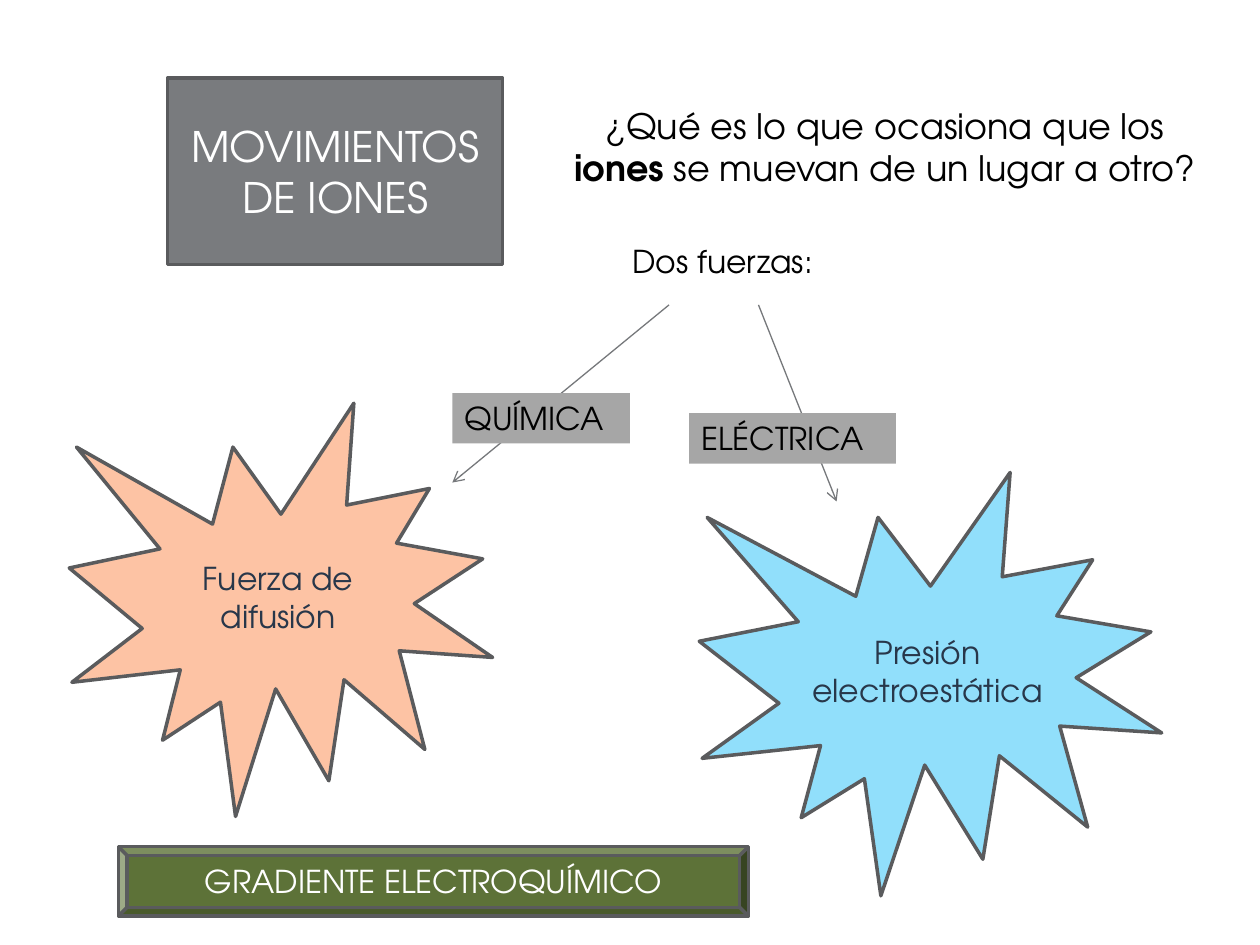
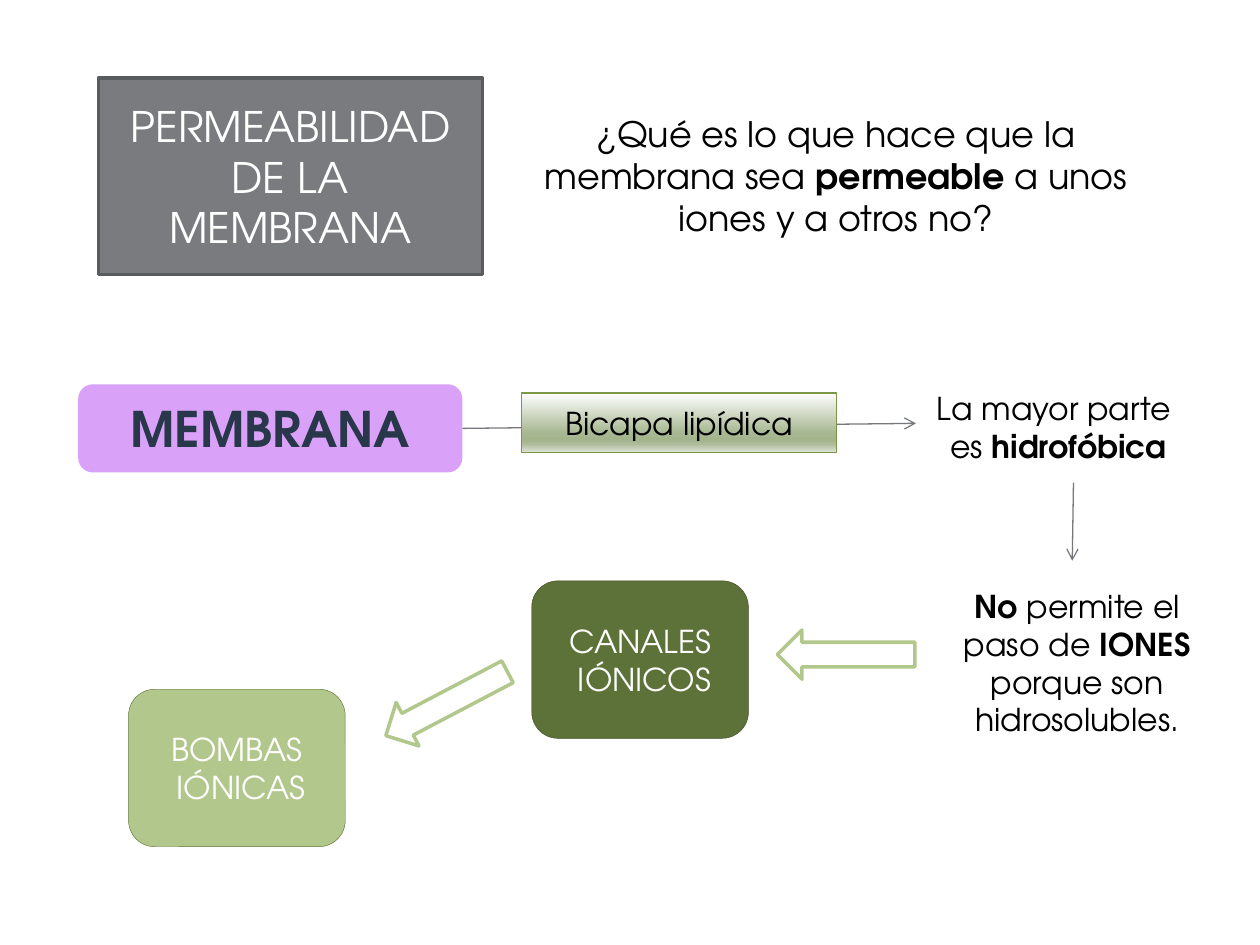
"""Builds two slides on ion movement and membrane permeability."""
from lxml.etree import SubElement as Sub
from pptx import Presentation
from pptx.dml.color import RGBColor
from pptx.enum.shapes import MSO_CONNECTOR as Wire, MSO_SHAPE as Kind
from pptx.enum.text import MSO_ANCHOR as Anchor, MSO_AUTO_SIZE as Auto, PP_ALIGN as Align
from pptx.oxml.ns import qn
from pptx.util import Inches, Pt

tint = RGBColor.from_string
FONT = "TeX Gyre Adventor"
BLACK, WHITE, NAVY = "000000", "FFFFFF", "28374A"
GRAY, EDGE, THIN, TAG = "797B7E", "5A5B5D", "76787B", "A6A6A6"
MOSS, LEAF = "5D7238", "B2C78C"

deck = Presentation()
deck.slide_width, deck.slide_height = Inches(10), Inches(7.5)
COL, ROW = deck.slide_width / 100, deck.slide_height / 75


def style(shape, at, fill=None, line=None, width=2):
    """Places a shape on the grid and sets its fill and line."""
    left, top, wide, high = at
    shape.left, shape.width = int(left * COL), int(wide * COL)
    shape.top, shape.height = int(top * ROW), int(high * ROW)
    shape.shadow.inherit = False
    if fill:
        shape.fill.solid()
        shape.fill.fore_color.rgb = tint(fill)
    else:
        shape.fill.background()
    if line:
        shape.line.color.rgb = tint(line)
        shape.line.width = Pt(width)
    else:
        shape.line.fill.background()


def write(shape, text, size=18, color=BLACK, align=Align.CENTER, anchor=Anchor.MIDDLE):
    """Writes lines of text, where stars enclose bold runs."""
    frame = shape.text_frame
    frame.word_wrap, frame.auto_size = True, Auto.NONE
    frame.vertical_anchor = anchor
    for row, words in enumerate(text.split("\n")):
        para = frame.add_paragraph() if row else frame.paragraphs[0]
        para.alignment = align
        for part, piece in enumerate(words.split("*")):
            if piece:
                run = para.add_run()
                run.text = piece
                font = run.font
                font.name, font.size, font.bold = FONT, Pt(size), part % 2 == 1
                font.color.rgb = tint(color)


pages = [
    {
        "title": ("MOVIMIENTOS DE IONES", (13.3, 6.2, 26.6, 14.8)),
        "wires": [(53.1, 24.2, 35.9, 38.3), (60.2, 24.2, 66.4, 39.8)],
        "notes": [
            ("¿Qué es lo que ocasiona que los *iones* se muevan de un lugar a otro?",
             (43.7, 7.8, 53.1, 7.7), 20, Align.CENTER),
            ("Dos fuerzas:", (49.2, 18.7, 19.5, 4), 18, Align.LEFT),
        ],
        "boxes": [
            (Kind.EXPLOSION1, (5.5, 32, 33.6, 32.8), "FDC3A4", EDGE, 2,
             "Fuerza de difusión", 18, NAVY),
            (Kind.EXPLOSION1, (55.5, 37.5, 36.7, 33.6), "91DFFB", EDGE, 2,
             "Presión electroestática", 18, NAVY),
            (Kind.BEVEL, (9.4, 67.2, 50, 5.5), MOSS, EDGE, 2,
             "GRADIENTE ELECTROQUÍMICO", 18, WHITE),
        ],
        "tags": [("QUÍMICA", (35.9, 31.2, 14.1, 4)), ("ELÉCTRICA", (54.7, 32.8, 16.4, 4))],
        "heads": [],
    },
    {
        "title": ("PERMEABILIDAD DE LA MEMBRANA", (7.8, 6.2, 30.5, 15.6)),
        "wires": [(36.7, 34, 72.7, 33.6), (85.2, 38.3, 85.1, 44.5)],
        "notes": [
            ("¿Qué es lo que hace que la membrana sea *permeable* a unos iones y a otros no?",
             (39.8, 8.4, 53.1, 11.1), 20, Align.CENTER),
            ("La mayor parte \nes *hidrofóbica*", (71.9, 30.4, 24.2, 7.1), 18, Align.CENTER),
            ("*No* permite el paso de *IONES* porque son hidrosolubles.",
             (73.4, 46.1, 24.2, 13.1), 18, Align.CENTER),
        ],
        "boxes": [
            (Kind.ROUNDED_RECTANGLE, (6.2, 30.5, 30.5, 7), "D9A2F8", None, 0,
             "*MEMBRANA*", 28, NAVY),
            (Kind.ROUNDED_RECTANGLE, (42.2, 46.1, 17.2, 12.5), MOSS, "3E4C25", 0.25,
             "CANALES\n IÓNICOS", 18, WHITE),
            (Kind.ROUNDED_RECTANGLE, (10.2, 54.7, 17.2, 12.5), LEAF, MOSS, 0.25,
             "BOMBAS\n IÓNICAS", 18, WHITE),
            (Kind.RECTANGLE, (41.4, 31.2, 25, 4.7), WHITE, "7A9746", 0.75,
             "Bicapa lipídica", 18, BLACK),
        ],
        "tags": [],
        "heads": [((61.7, 50, 10.9, 3.9), 0), ((30, 53.9, 10.9, 3.9), 332.3)],
    },
]

for page in pages:
    slide = deck.slides.add_slide(deck.slide_layouts[5])
    shapes = slide.shapes

    text, at = page["title"]
    title = shapes.title
    title.left = title.top = title.width = title.height = 0
    geom = Sub(title.element.spPr, qn("a:prstGeom"), prst="round2DiagRect")
    Sub(geom, qn("a:avLst"))
    style(title, at, GRAY, EDGE)
    write(title, text, 24, WHITE)

    for left, top, right, low in page["wires"]:
        wire = shapes.add_connector(
            Wire.STRAIGHT, int(left * COL), int(top * ROW), int(right * COL), int(low * ROW))
        wire.line.color.rgb = tint(THIN)
        wire.line.width = Pt(0.75)
        Sub(wire.line._get_or_add_ln(), qn("a:tailEnd"), type="arrow")
        Sub(wire.element.spPr, qn("a:effectLst"))

    for text, at, size, align in page["notes"]:
        note = shapes.add_textbox(0, 0, 0, 0)
        style(note, at)
        write(note, text, size, align=align, anchor=Anchor.TOP)

    for kind, at, fill, line, width, text, size, color in page["boxes"]:
        box = shapes.add_shape(kind, 0, 0, 0, 0)
        style(box, at, fill, line, width)
        write(box, text, size, color)

    for text, at in page["tags"]:
        tag = shapes.add_shape(Kind.RECTANGLE, 0, 0, 0, 0)
        style(tag, at, TAG)
        write(tag, text, align=Align.LEFT, anchor=Anchor.TOP)

    for at, turn in page["heads"]:
        head = shapes.add_shape(Kind.LEFT_ARROW, 0, 0, 0, 0)
        style(head, at, None, LEAF)
        head.rotation = turn

box.fill.gradient()
box.fill.gradient_angle = 270
stops = box.element.spPr.find(qn("a:gradFill")).find(qn("a:gsLst"))
for stop in list(stops):
    stops.remove(stop)
for share, shade in [(0, "FEFEFE"), (68, "A7B791"), (81, "A4B48D"), (86, "ADBB9A"), (100, "DDE2D6")]:
    stop = Sub(stops, qn("a:gs"), pos=str(share * 1000))
    Sub(stop, qn("a:srgbClr"), val=shade)

deck.save("out.pptx")
